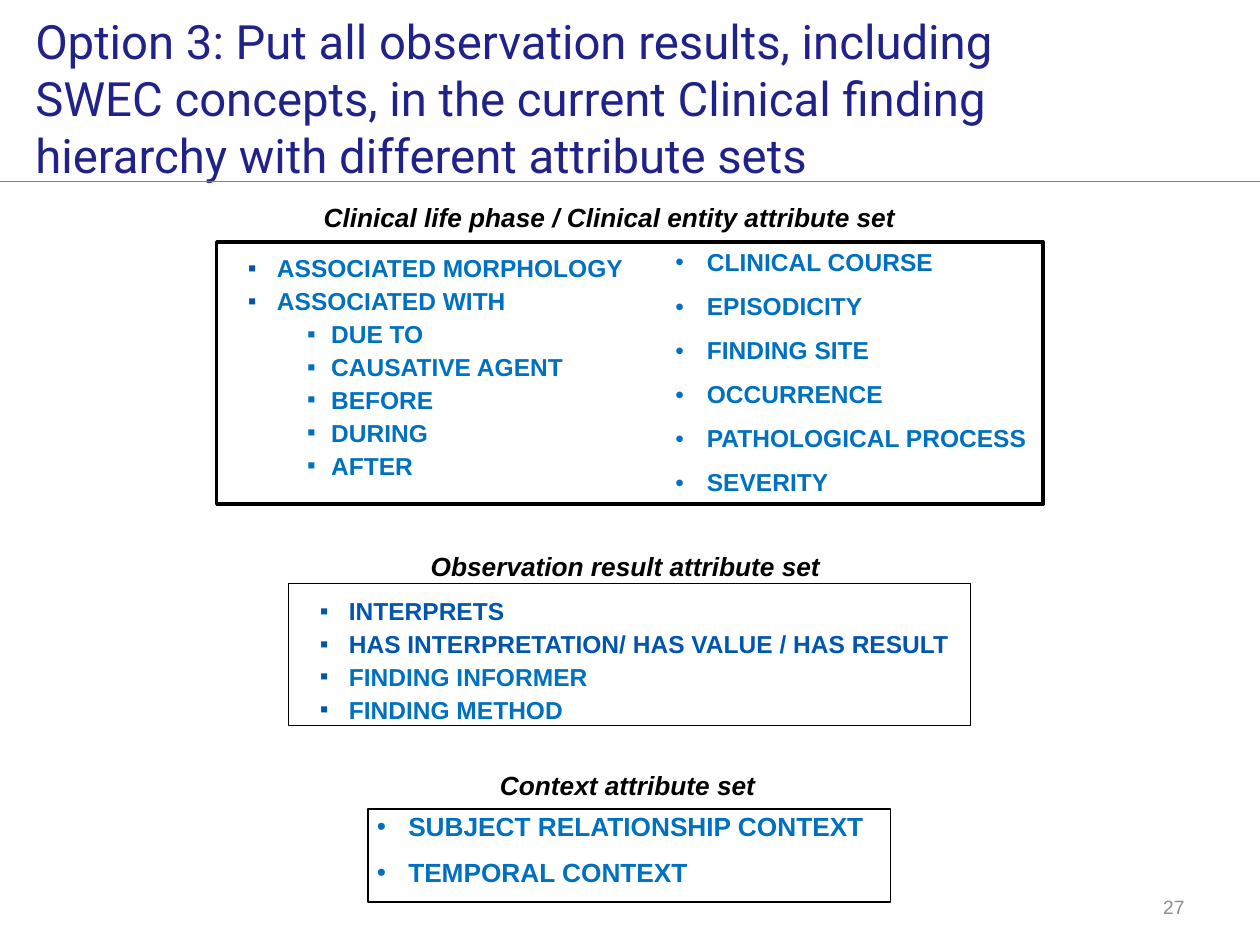
from lxml import etree
from pptx import Presentation
from pptx.dml.color import RGBColor
from pptx.enum.shapes import MSO_CONNECTOR, MSO_SHAPE
from pptx.enum.text import MSO_ANCHOR, PP_ALIGN
from pptx.oxml.ns import qn
from pptx.util import Inches, Pt


def rgb(color):
    return RGBColor.from_string(color)


def add_run(p, text, size, color, bold=False, italic=False, font="Arial"):
    r = p.add_run()
    r.text = text
    r.font.name, r.font.size = font, Pt(size)
    r.font.bold, r.font.italic = bold, italic
    r.font.color.rgb = rgb(color)


BLUE, DARK_BLUE, BLACK = "0070C0", "0055B0", "000000"

prs = Presentation()
prs.slide_width, prs.slide_height = Inches(10), Inches(7.5)
s = prs.slides.add_slide(prs.slide_layouts[5])

rule = s.shapes.add_connector(MSO_CONNECTOR.STRAIGHT, 0, Inches(1.44), Inches(10), Inches(1.44))
rule.line.color.rgb = rgb("808080")
rule.line.width = Pt(0.75)
etree.SubElement(rule._element.spPr, qn("a:effectLst"))

title = s.shapes.title
title.left, title.top, title.width, title.height = [Inches(v) for v in (0.18, 0.16, 7.81, 1.23)]
tf = title.text_frame
tf.word_wrap = True
tf.vertical_anchor = MSO_ANCHOR.MIDDLE
tf.margin_left = tf.margin_right = tf.margin_top = tf.margin_bottom = Inches(0.1)
p = tf.paragraphs[0]
p.alignment = PP_ALIGN.LEFT
add_run(p, "Option 3: Put all observation results, including SWEC concepts, in the current "
        "Clinical finding hierarchy with different attribute sets", 27, "21218A", font="Roboto")

for x, y, w, h, width in [(1.72, 1.92, 6.56, 2.08, 2),
                          (2.29, 4.63, 5.41, 1.13, 0.75),
                          (2.92, 6.42, 4.15, 0.74, 0.75)]:
    sp = s.shapes.add_shape(MSO_SHAPE.RECTANGLE, Inches(x), Inches(y), Inches(w), Inches(h))
    sp.shadow.inherit = False
    sp.fill.background()
    sp.line.color.rgb = rgb(BLACK)
    sp.line.width = Pt(width)

SQUARE = dict(char="▪", margins=(0.1, 0.1), before=1, after=1, spacing=1)
ROUND = dict(char="•", margins=(0.07, 0.04), before=10, after=0, spacing=0.9)
TOP, SUB, DOT = (0.38, -0.23, DARK_BLUE), (0.81, -0.19, BLUE), (0.25, -0.25, BLUE)

lists = [
    ((1.72, 1.91, 3.34, 2.06), SQUARE, 14, [
        ("ASSOCIATED MORPHOLOGY", TOP, BLUE),
        ("ASSOCIATED WITH", TOP, BLUE),
        ("DUE TO", SUB, BLUE),
        ("CAUSATIVE AGENT", SUB, BLUE),
        ("BEFORE", SUB, BLUE),
        ("DURING", SUB, BLUE),
        ("AFTER", SUB, BLUE)]),
    ((5.29, 1.95, 2.99, 2.03), ROUND, 14, [
        ("CLINICAL COURSE", DOT, BLUE),
        ("EPISODICITY", DOT, BLUE),
        ("FINDING SITE", DOT, BLUE),
        ("OCCURRENCE", DOT, BLUE),
        ("PATHOLOGICAL PROCESS", DOT, BLUE),
        ("SEVERITY", DOT, BLUE)]),
    ((2.29, 4.63, 5.41, 1.13), SQUARE, 14, [
        ("INTERPRETS", TOP, DARK_BLUE),
        ("HAS INTERPRETATION/ HAS VALUE / HAS RESULT", TOP, DARK_BLUE),
        ("FINDING INFORMER", TOP, BLUE),
        ("FINDING METHOD", TOP, BLUE)]),
    ((2.92, 6.42, 4.15, 0.74), ROUND, 15, [
        ("SUBJECT RELATIONSHIP CONTEXT", DOT, BLUE),
        ("TEMPORAL CONTEXT", DOT, BLUE)]),
]
for box, style, size, items in lists:
    tf = s.shapes.add_textbox(*[Inches(v) for v in box]).text_frame
    tf.word_wrap = True
    tf.margin_left = tf.margin_right = Inches(style["margins"][0])
    tf.margin_top = tf.margin_bottom = Inches(style["margins"][1])
    for i, (text, (margin, indent, bullet_color), color) in enumerate(items):
        p = tf.add_paragraph() if i else tf.paragraphs[0]
        pPr = p._p.get_or_add_pPr()
        pPr.set("marL", str(Inches(margin)))
        pPr.set("indent", str(Inches(indent)))
        buClr = etree.SubElement(pPr, qn("a:buClr"))
        etree.SubElement(buClr, qn("a:srgbClr"), val=bullet_color)
        etree.SubElement(pPr, qn("a:buFont"), typeface="Arial")
        etree.SubElement(pPr, qn("a:buChar"), char=style["char"])
        p.line_spacing = style["spacing"]
        p.space_before = Pt(style["before"] if i else 0)
        p.space_after = Pt(style["after"])
        add_run(p, text, size, color, bold=True)

for x, y, w, text in [(2.47, 1.55, 5.06, "Clinical life phase / Clinical entity attribute set"),
                      (3.32, 4.32, 3.35, "Observation result attribute set"),
                      (3.87, 6.06, 2.26, "Context attribute set")]:
    tf = s.shapes.add_textbox(Inches(x), Inches(y), Inches(w), Inches(0.35)).text_frame
    tf.word_wrap = True
    add_run(tf.paragraphs[0], text, 15, BLACK, bold=True, italic=True)

tf = s.shapes.add_textbox(Inches(7.17), Inches(7.04), Inches(2.33), Inches(0.32)).text_frame
tf.word_wrap = True
tf.vertical_anchor = MSO_ANCHOR.MIDDLE
p = tf.paragraphs[0]
p.alignment = PP_ALIGN.RIGHT
add_run(p, "27", 11, "8C8C8C")

prs.save("out.pptx")
